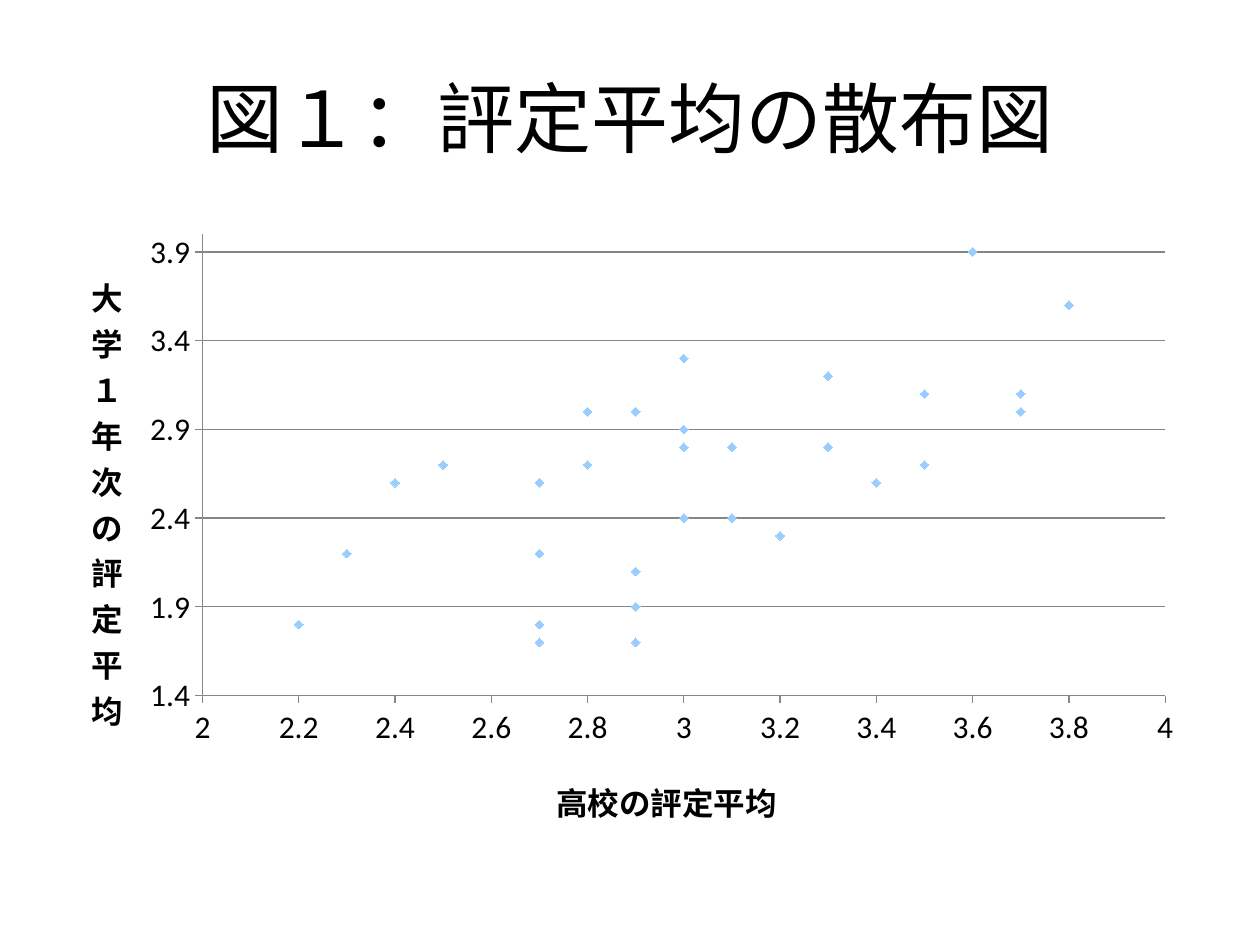
from typing import NamedTuple

from lxml.etree import SubElement
from pptx import Presentation
from pptx.chart.data import XyChartData
from pptx.dml.color import RGBColor
from pptx.enum.chart import XL_CHART_TYPE, XL_MARKER_STYLE, XL_TICK_LABEL_POSITION, XL_TICK_MARK
from pptx.enum.text import MSO_ANCHOR, PP_ALIGN
from pptx.oxml.ns import qn
from pptx.util import Inches, Pt

BLACK = RGBColor(0x00, 0x00, 0x00)
GREY = RGBColor(0x86, 0x86, 0x86)
SKY = RGBColor(0x99, 0xCC, 0xFF)
FONT = "Calibri"

# (high school grade average, first-year university grade average)
GRADES = [
    (3, 2.4), (2.4, 2.6), (3.7, 3), (3.6, 3.9), (3.8, 3.6), (2.9, 3),
    (3.5, 3.1), (3, 2.8), (2.3, 2.2), (3, 2.9), (2.9, 1.9), (2.7, 2.2),
    (3.7, 3.1), (2.7, 2.6), (3.3, 2.8), (2.8, 2.7), (3.1, 2.4), (2.8, 3),
    (3, 3.3), (2.2, 1.8), (3.1, 2.8), (3.3, 3.2), (2.7, 1.8), (3.5, 2.7),
    (2.9, 2.1), (2.7, 1.7), (2.9, 1.7), (3.2, 2.3), (3.4, 2.6), (2.5, 2.7),
]


class AxisStyle(NamedTuple):
    title: str
    low: float
    high: float
    step: float
    grid: bool
    title_pos: tuple[float, float]  # fractions of the chart


X_AXIS = AxisStyle("高校の評定平均", 2, 4, 0.2, False, (0.43, 0.88))
Y_AXIS = AxisStyle("大学１年次の評定平均", 1.4, 4, 0.5, True, (0.02, 0.07))


def set_font(font, size: float, bold: bool = False) -> None:
    font.name, font.size, font.bold = FONT, Pt(size), bold
    font.color.rgb = BLACK


def write(tf, text: str, *, size: float, bold: bool = False) -> None:
    p = tf.paragraphs[0]
    p.alignment = PP_ALIGN.CENTER
    r = p.add_run()
    r.text = text
    set_font(r.font, size, bold)


def place(parent, **values) -> None:
    """Give a chart part a manual layout in fractions of the chart."""
    layout = parent.find(qn("c:layout"))
    if layout is None:
        layout = SubElement(parent, qn("c:layout"))
        parent.remove(layout)
        tx = parent.find(qn("c:tx"))
        parent.insert(0 if tx is None else parent.index(tx) + 1, layout)
    for child in list(layout):
        layout.remove(child)
    manual = SubElement(layout, qn("c:manualLayout"))
    for tag, value in values.items():
        SubElement(manual, qn(f"c:{tag}")).set("val", str(value))


def format_axis(axis, style: AxisStyle) -> None:
    axis.minimum_scale, axis.maximum_scale = style.low, style.high
    axis.major_unit = style.step
    axis.major_tick_mark = XL_TICK_MARK.OUTSIDE
    axis.minor_tick_mark = XL_TICK_MARK.NONE
    axis.tick_label_position = XL_TICK_LABEL_POSITION.LOW
    axis.tick_labels.number_format = "General"
    axis.tick_labels.number_format_is_linked = False
    set_font(axis.tick_labels.font, 18)
    axis.format.line.color.rgb = GREY
    axis.format.line.width = Pt(0.75)
    axis.has_major_gridlines = style.grid
    if style.grid:
        line = axis.major_gridlines.format.line
        line.color.rgb, line.width = GREY, Pt(0.75)
    write(axis.axis_title.text_frame, style.title, size=18, bold=True)
    x, y = style.title_pos
    place(axis.axis_title._element, xMode="edge", yMode="edge", x=x, y=y)


def add_scatter(s) -> None:
    data = XyChartData()
    series = data.add_series("Series 1")
    for x, y in GRADES:
        series.add_data_point(x, y)
    chart = s.shapes.add_chart(XL_CHART_TYPE.XY_SCATTER, Inches(0.5), Inches(1.75),
                               Inches(9), Inches(4.95), data).chart
    set_font(chart.font, 10)
    chart.has_legend = False
    chart.has_title = False
    plot = chart.plots[0]
    plot.vary_by_categories = False

    # Diamond points without a joining line
    points = plot.series[0]
    points.smooth = False
    points.format.line.fill.background()
    points.marker.style = XL_MARKER_STYLE.DIAMOND
    points.marker.size = 5
    points.marker.format.fill.solid()
    points.marker.format.fill.fore_color.rgb = SKY
    points.marker.format.line.color.rgb = SKY

    # Axes, with the vertical title set in stacked characters
    format_axis(chart.category_axis, X_AXIS)
    format_axis(chart.value_axis, Y_AXIS)
    body = chart.value_axis.axis_title.text_frame._txBody.find(qn("a:bodyPr"))
    body.set("rot", "0")
    body.set("vert", "wordArtVertRtl")
    place(chart._chartSpace.chart.plotArea, layoutTarget="inner", xMode="edge",
          yMode="edge", x=0.123, y=0.022, w=0.849, h=0.74)


def main() -> None:
    prs = Presentation()
    prs.slide_width, prs.slide_height = Inches(10), Inches(7.5)
    s = prs.slides.add_slide(prs.slide_layouts[5])

    # Title
    title = s.shapes.title
    title.left, title.top = Inches(0.5), Inches(0.3)
    title.width, title.height = Inches(9), Inches(1.25)
    title.text_frame.vertical_anchor = MSO_ANCHOR.MIDDLE
    write(title.text_frame, "図１：評定平均の散布図", size=44)

    add_scatter(s)
    prs.save("out.pptx")


if __name__ == "__main__":
    main()
